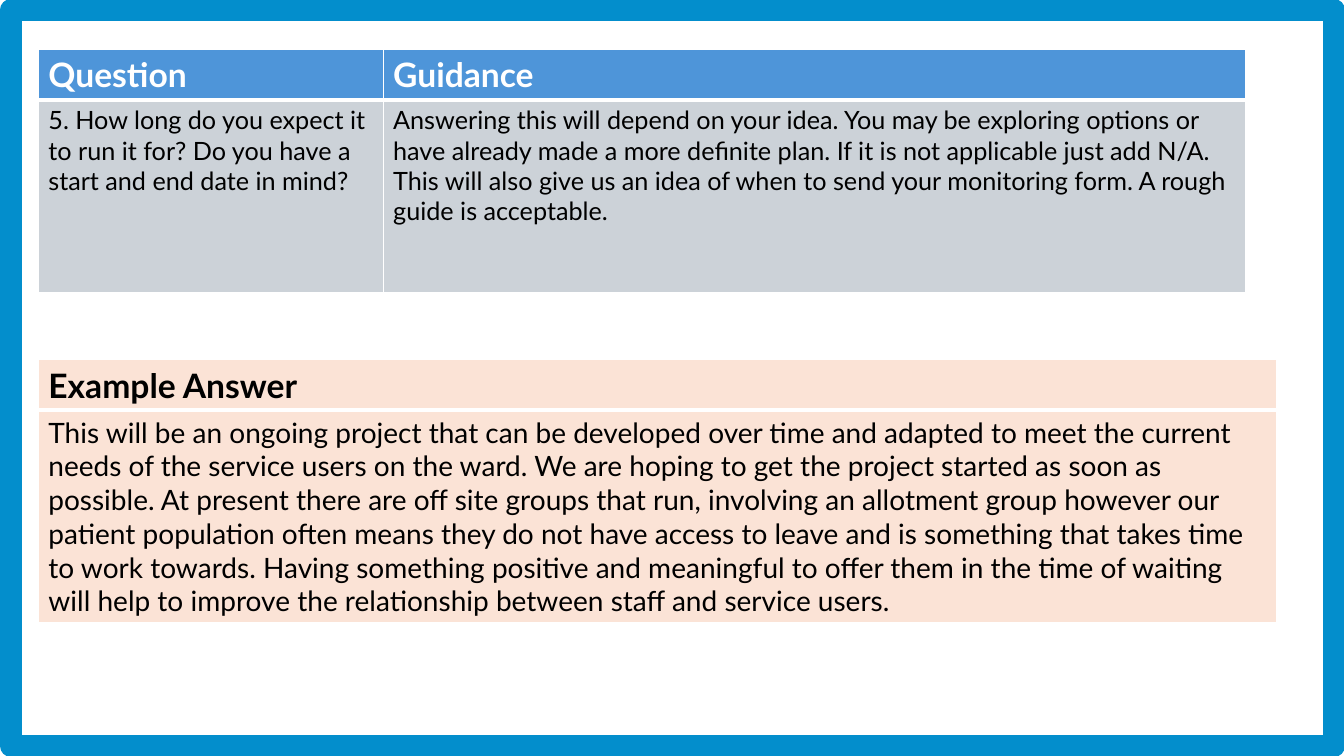
from pptx import Presentation
from pptx.dml.color import RGBColor
from pptx.enum.shapes import MSO_SHAPE as SHAPE
from pptx.oxml import parse_xml
from pptx.oxml.ns import nsdecls
from pptx.util import Inches, Pt

FONT = "Lato"
BLACK = RGBColor(0x00, 0x00, 0x00)
WHITE = RGBColor(0xFF, 0xFF, 0xFF)
FRAME_BLUE = RGBColor(0x03, 0x8E, 0xCC)
HEADER_BLUE = RGBColor(0x4E, 0x95, 0xD9)
BODY_GREY = RGBColor(0xCC, 0xD2, 0xD8)
PEACH = RGBColor(0xFB, 0xE3, 0xD6)

SLIDE_W, SLIDE_H = 13.33, 7.5
LEFT = 0.38
HEADER_H = 0.49

QUESTION_ROWS = [
    ["Question", "Guidance"],
    [
        "5. How long do you expect it to run it for? Do you have a start and "
        "end date in mind?",
        "Answering this will depend on your idea. You may be exploring options "
        "or have already made a more definite plan. If it is not applicable "
        "just add N/A. This will also give us an idea of when to send your "
        "monitoring form. A rough guide is acceptable.",
    ],
]
ANSWER_ROWS = [
    ["Example Answer"],
    [
        "This will be an ongoing project that can be developed over time and "
        "adapted to meet the current needs of the service users on the ward. "
        "We are hoping to get the project started as soon as possible. At "
        "present there are off site groups that run, involving an allotment "
        "group however our patient population often means they do not have "
        "access to leave and is something that takes time to work towards. "
        "Having something positive and meaningful to offer them in the time of "
        "waiting will help to improve the relationship between staff and "
        "service users."
    ],
]
QUESTION_STYLES = [
    {"fill": HEADER_BLUE, "bottom": 3,
     "font": {"size": Pt(24), "bold": True, "color": WHITE}},
    {"fill": BODY_GREY, "bottom": 1,
     "font": {"size": Pt(18), "bold": False, "color": BLACK}},
]
ANSWER_STYLES = [
    {"fill": PEACH, "bottom": 3,
     "font": {"size": Pt(24), "bold": True, "color": BLACK}},
    {"fill": PEACH, "bottom": 1,
     "font": {"size": Pt(20), "bold": False, "color": BLACK}},
]


def set_font(font, formats):
    """Apply a dict of format values to a font."""
    font.name = FONT
    for name, value in formats.items():
        if name == "color":
            font.color.rgb = value
        else:
            setattr(font, name, value)


def set_borders(cell, widths):
    """Draw white cell borders with widths in points, keyed by side."""
    tc_pr = cell._tc.get_or_add_tcPr()
    for i, (side, width) in enumerate(widths.items()):
        tc_pr.insert(i, parse_xml(
            f'<a:ln{side} {nsdecls("a")} w="{Pt(width)}"><a:solidFill>'
            f'<a:srgbClr val="{WHITE}"/></a:solidFill></a:ln{side}>'))


def add_frame(slide, x, y, w, h):
    """Draw the blue outline around the slide."""
    sp = slide.shapes.add_shape(SHAPE.RECTANGLE, *map(Inches, (x, y, w, h)))
    sp.shadow.inherit = False
    sp.fill.background()
    sp.line.color.rgb = FRAME_BLUE
    sp.line.width = Pt(16)


def add_text_table(slide, x, y, w, h, shares, rows, styles):
    """Fill the box with a header row and a body row."""
    box = map(Inches, (x, y, w, h))
    table = slide.shapes.add_table(len(rows), len(shares), *box).table
    table.horz_banding = False
    for column, share in zip(table.columns, shares):
        column.width = Inches(w * share)
    for row, height in zip(table.rows, (HEADER_H, h - HEADER_H)):
        row.height = Inches(height)
    for r, (texts, style) in enumerate(zip(rows, styles)):
        top = styles[r - 1]["bottom"] if r else 1
        for c, text in enumerate(texts):
            cell = table.cell(r, c)
            cell.fill.solid()
            cell.fill.fore_color.rgb = style["fill"]
            set_borders(cell, {"L": 1, "R": 1, "T": top, "B": style["bottom"]})
            run = cell.text_frame.paragraphs[0].add_run()
            run.text = text
            set_font(run.font, style["font"])


def main():
    """Build the slide and save it."""
    prs = Presentation()
    prs.slide_width, prs.slide_height = Inches(SLIDE_W), Inches(SLIDE_H)
    slide = prs.slides.add_slide(prs.slide_layouts[6])
    add_frame(slide, 0.11, 0.1, SLIDE_W - 0.21, SLIDE_H - 0.2)
    add_text_table(slide, LEFT, 0.49, 11.97, 2.4, (2 / 7, 5 / 7),
                   QUESTION_ROWS, QUESTION_STYLES)
    add_text_table(slide, LEFT, 3.57, 12.28, 2.6, (1,),
                   ANSWER_ROWS, ANSWER_STYLES)
    prs.save("out.pptx")


if __name__ == "__main__":
    main()
